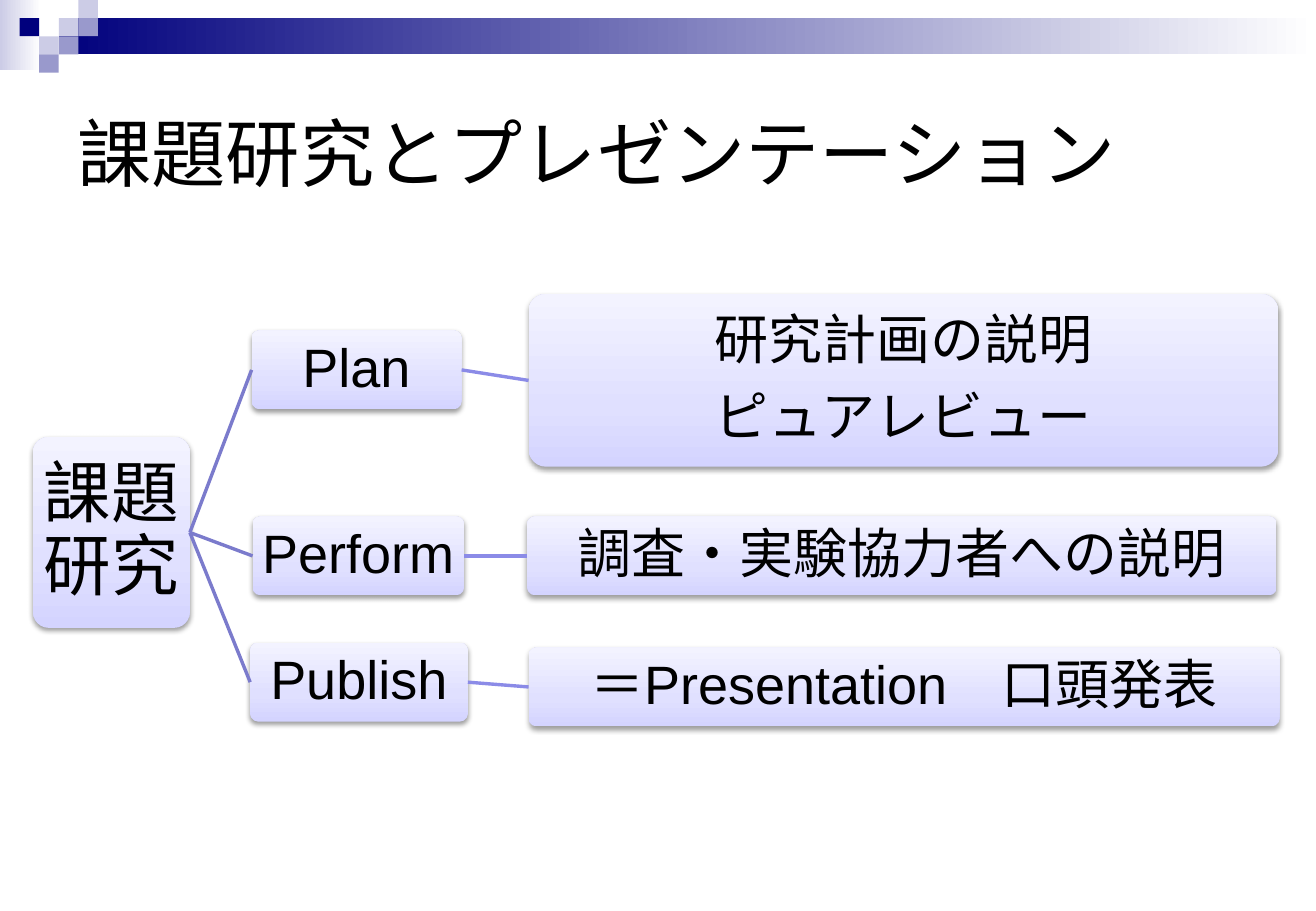
import copy

import pptx
import pptx.util
import pptx.dml.color
import pptx.enum.shapes
import pptx.enum.text
import pptx.oxml
import pptx.oxml.ns
import pptx.oxml.xmlchemy

Cm, Pt = pptx.util.Cm, pptx.util.Pt
RGB = pptx.dml.color.RGBColor.from_string
KIND = pptx.enum.shapes.MSO_SHAPE
ALIGN = pptx.enum.text.PP_ALIGN
MIDDLE = pptx.enum.text.MSO_ANCHOR.MIDDLE
qn = pptx.oxml.ns.qn

# Content: boxes are (lines, (left, top, width, height) in cm)
TITLE = "課題研究とプレゼンテーション"
ROOT = (["課題研究"], (0.69, 9.14, 3.28, 3.99))
STEPS = [
    ((["Plan"], (5.26, 6.91, 4.39, 1.65)),
     (["研究計画の説明", "ピュアレビュー"], (11.05, 6.15, 15.67, 3.61))),
    ((["Perform"], (5.28, 10.8, 4.42, 1.65)),
     (["調査・実験協力者への説明"], (11.02, 10.8, 15.67, 1.65))),
    ((["Publish"], (5.23, 13.44, 4.55, 1.65)),
     (["＝Presentation　口頭発表"], (11.05, 13.54, 15.7, 1.65))),
]
# Header mosaic: (column, row, colour name)
TILES = [(3, 1, "pale"), (4, 0, "pale"), (4, 1, "mid"), (2, 2, "pale"),
         (1, 1, "navy"), (3, 2, "mid"), (2, 3, "mid")]

THEME = {
    "font": "Arial", "title": 44, "root": 40, "box": 32,
    "text": "000000", "navy": "00007D", "mid": "9999CC", "pale": "CCCCE6",
    "trunk": "7B7BCC", "branch": "8B8BE7", "line": 2,
    "glow": [(0, "D4D4FF"), (0.35, "E0E0FF"), (1, "F3F3FF")],
    "fade": [(0, "CCCCE6"), (1, "FFFFFF")],
    "bar": [(0, "00007D"), (1, "FFFFFF")],
}
WIDE, HIGH = 27.51, 19.05
COL, ROW = 0.41, 0.38

SHADOW = (
    '<a:outerShdw xmlns:a="http://schemas.openxmlformats.org/drawingml/2006/main"'
    ' blurRad="39370" dist="20320" dir="5400000" rotWithShape="0">'
    '<a:srgbClr val="000000"><a:alpha val="38000"/></a:srgbClr></a:outerShdw>')


def blend(shape, stops, angle):
    """Fill with a linear gradient of any number of stops."""
    fill = shape.fill
    fill.gradient()
    fill.gradient_angle = angle
    first = next(shape._element.spPr.iter(qn("a:gs")))
    for _ in stops[2:]:
        first.addnext(copy.deepcopy(first))
    for stop, (place, color) in zip(fill.gradient_stops, stops):
        stop.position = place
        stop.color.rgb = RGB(color)


def block(slide, area, kind=KIND.RECTANGLE):
    shape = slide.shapes.add_shape(kind, *map(Cm, area))
    shape.shadow.inherit = False
    shape.line.fill.background()
    return shape


def write(shape, lines, size):
    frame = shape.text_frame
    frame.word_wrap = True
    frame.vertical_anchor = MIDDLE
    frame.text = "\n".join(lines)
    for para in frame.paragraphs:
        para.font.name = THEME["font"]
        para.font.size = Pt(size)
        para.font.color.rgb = RGB(THEME["text"])
    return frame


def card(slide, item, size):
    """Draw a shaded rounded box with centred text."""
    lines, area = item
    shape = block(slide, area, KIND.ROUNDED_RECTANGLE)
    shape.adjustments[0] = 0.1
    blend(shape, THEME["glow"], 90)
    effects = shape._element.spPr.find(qn("a:effectLst"))
    effects.append(pptx.oxml.parse_xml(SHADOW))
    frame = write(shape, lines, size)
    frame.margin_left = frame.margin_right = Cm(0.1)
    frame.margin_top = frame.margin_bottom = Cm(0.1)
    for para in frame.paragraphs:
        para.alignment = ALIGN.CENTER
        para.line_spacing = 0.9
    for para in frame.paragraphs[:-1]:
        para.space_after = Pt(size * 0.35)
    return shape


def link(slide, start, end, color):
    """Join the right side of one box to the left side of another."""
    line = slide.shapes.add_connector(
        pptx.enum.shapes.MSO_CONNECTOR.STRAIGHT, 0, 0, 0, 0)
    line.begin_connect(start, 3)
    line.end_connect(end, 1)
    line.line.color.rgb = RGB(color)
    line.line.width = Pt(THEME["line"])
    line._element.spPr.append(pptx.oxml.xmlchemy.OxmlElement("a:effectLst"))


def header(slide):
    blend(block(slide, (0, 0, 0.86, 1.47)), THEME["fade"], 0)
    left = 3 * COL
    blend(block(slide, (left, ROW, WIDE - left, 2 * ROW)), THEME["bar"], 0)
    for col, row, color in TILES:
        tile = block(slide, (col * COL, row * ROW, COL, ROW))
        tile.fill.solid()
        tile.fill.fore_color.rgb = RGB(THEME[color])


def main():
    deck = pptx.Presentation()
    deck.slide_width, deck.slide_height = Cm(WIDE), Cm(HIGH)
    slide = deck.slides.add_slide(deck.slide_layouts[6])
    header(slide)
    title = slide.shapes.add_textbox(Cm(1.37), Cm(1.27), Cm(24.77), Cm(3.81))
    write(title, [TITLE], THEME["title"])

    root = card(slide, ROOT, THEME["root"])
    for step, detail in STEPS:
        left = card(slide, step, THEME["box"])
        right = card(slide, detail, THEME["box"])
        link(slide, root, left, THEME["trunk"])
        link(slide, left, right, THEME["branch"])
    deck.save("out.pptx")


if __name__ == "__main__":
    main()
